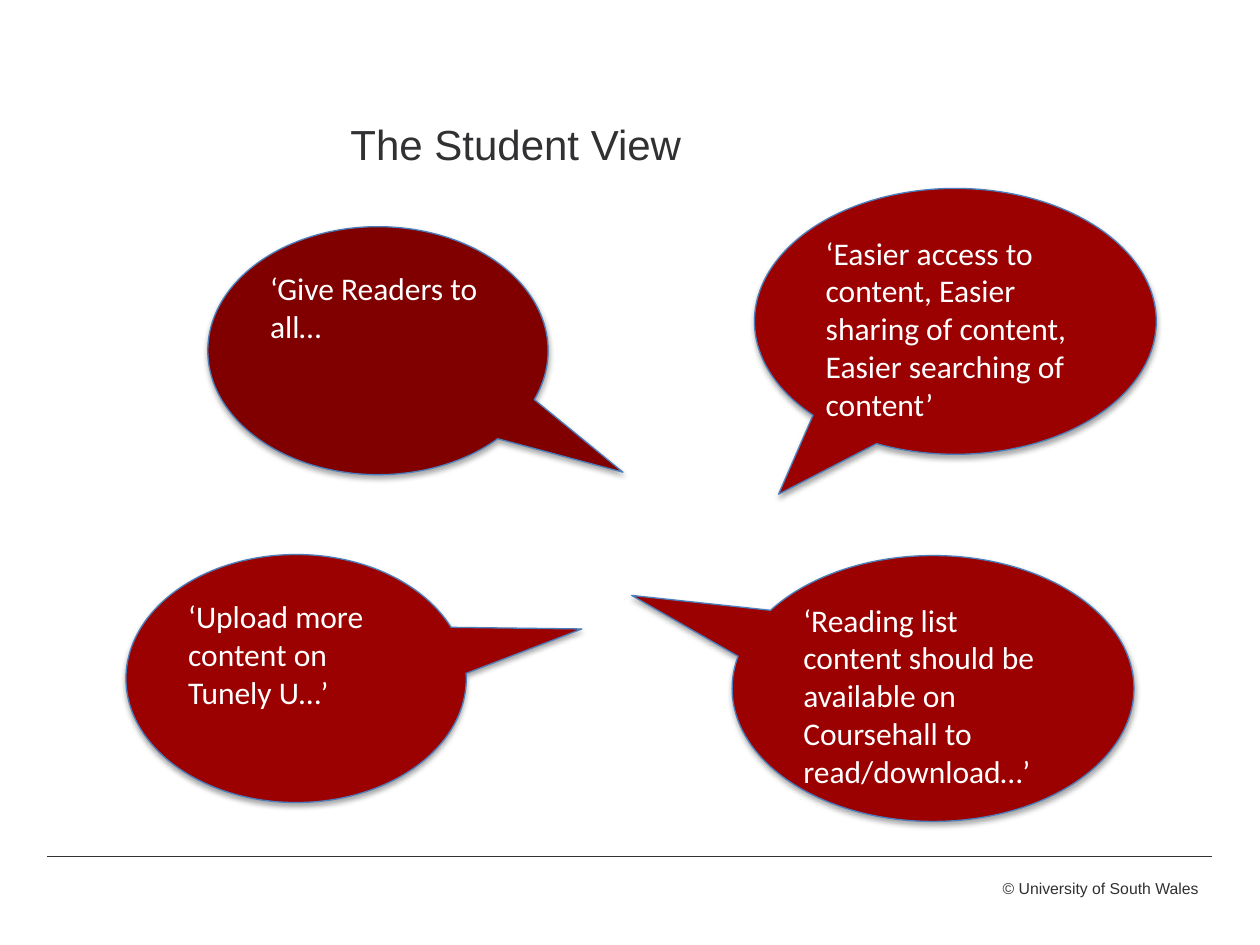
from lxml import etree
from pptx import Presentation
from pptx.dml.color import RGBColor
from pptx.enum.shapes import MSO_CONNECTOR, MSO_SHAPE
from pptx.enum.text import MSO_ANCHOR, MSO_AUTO_SIZE, PP_ALIGN
from pptx.oxml import parse_xml
from pptx.oxml.ns import nsdecls, qn
from pptx.util import Cm, Pt


def color(value):
    return RGBColor.from_string(value)


def format_text(tf, font, size, value, align=PP_ALIGN.LEFT):
    for p in tf.paragraphs:
        p.alignment = align
        for r in p.runs:
            r.font.name = font
            r.font.size = Pt(size)
            r.font.color.rgb = color(value)


GREY = "313133"
RED = "9B0101"
DARK_RED = "800000"
LARGE = (8.1, 5.36)
SMALL = (6.86, 5)

prs = Presentation()
prs.slide_width, prs.slide_height = Cm(25.4), Cm(19.05)
s = prs.slides.add_slide(prs.slide_layouts[5])

# Footer rule
rule = s.shapes.add_connector(MSO_CONNECTOR.STRAIGHT, Cm(0.95), Cm(17.27), Cm(24.43), Cm(17.27))
rule.line.color.rgb = color(GREY)
rule.line.width = Pt(0.25)
etree.SubElement(rule._element.spPr, qn("a:effectLst"))

# Copyright line
sp = s.shapes.add_textbox(Cm(19.91), Cm(17.6), Cm(4.5), Cm(0.64))
tf = sp.text_frame
tf.word_wrap = False
tf.text = "© University of South Wales"
format_text(tf, "Arial", 9, GREY, PP_ALIGN.RIGHT)

# Title
title = s.shapes.title
title.left, title.top, title.width, title.height = Cm(6.81), Cm(2.26), Cm(12.01), Cm(2.31)
tf = title.text_frame
tf.text = "The Student View"
tf.auto_size = MSO_AUTO_SIZE.NONE
tf.vertical_anchor = MSO_ANCHOR.TOP
format_text(tf, "Arial", 24, GREY)

# Student quotes: left, top, size, pointer tip, fill, text
quotes = [
    (15.21, 3.8, LARGE, (-0.44, 0.65), RED,
     "‘Easier access to content, Easier sharing of content, Easier searching of content’"),
    (4.19, 4.57, SMALL, (0.72, 0.49), DARK_RED, "‘Give Readers to all…"),
    (14.76, 11.2, LARGE, (-0.75, -0.35), RED,
     "‘Reading list content should be available on Coursehall to read/download…’"),
    (2.54, 11.18, SMALL, (0.84, -0.2), RED, "‘Upload more content on Tunely U…’"),
]
for left, top, (width, height), tip, fill, text in quotes:
    sp = s.shapes.add_shape(MSO_SHAPE.OVAL_CALLOUT, Cm(left), Cm(top), Cm(width), Cm(height))
    sp.adjustments[0], sp.adjustments[1] = tip
    sp.fill.solid()
    sp.fill.fore_color.rgb = color(fill)
    sp.line.color.rgb = color("4B7EBC")
    sp.line.width = Pt(0.75)

    # Soft shadow straight below the bubble
    sp.shadow.inherit = False
    sp._element.spPr.find(qn("a:effectLst")).append(parse_xml(
        f'<a:outerShdw {nsdecls("a")} blurRad="{Pt(3.1)}" dist="{Pt(1.8)}" dir="5400000" '
        'rotWithShape="0"><a:srgbClr val="000000"><a:alpha val="35000"/></a:srgbClr></a:outerShdw>'))

    tf = sp.text_frame
    tf.word_wrap = True
    tf.vertical_anchor = MSO_ANCHOR.TOP
    tf.text = text
    format_text(tf, "Calibri", 18, "FFFFFF")

prs.save("out.pptx")
